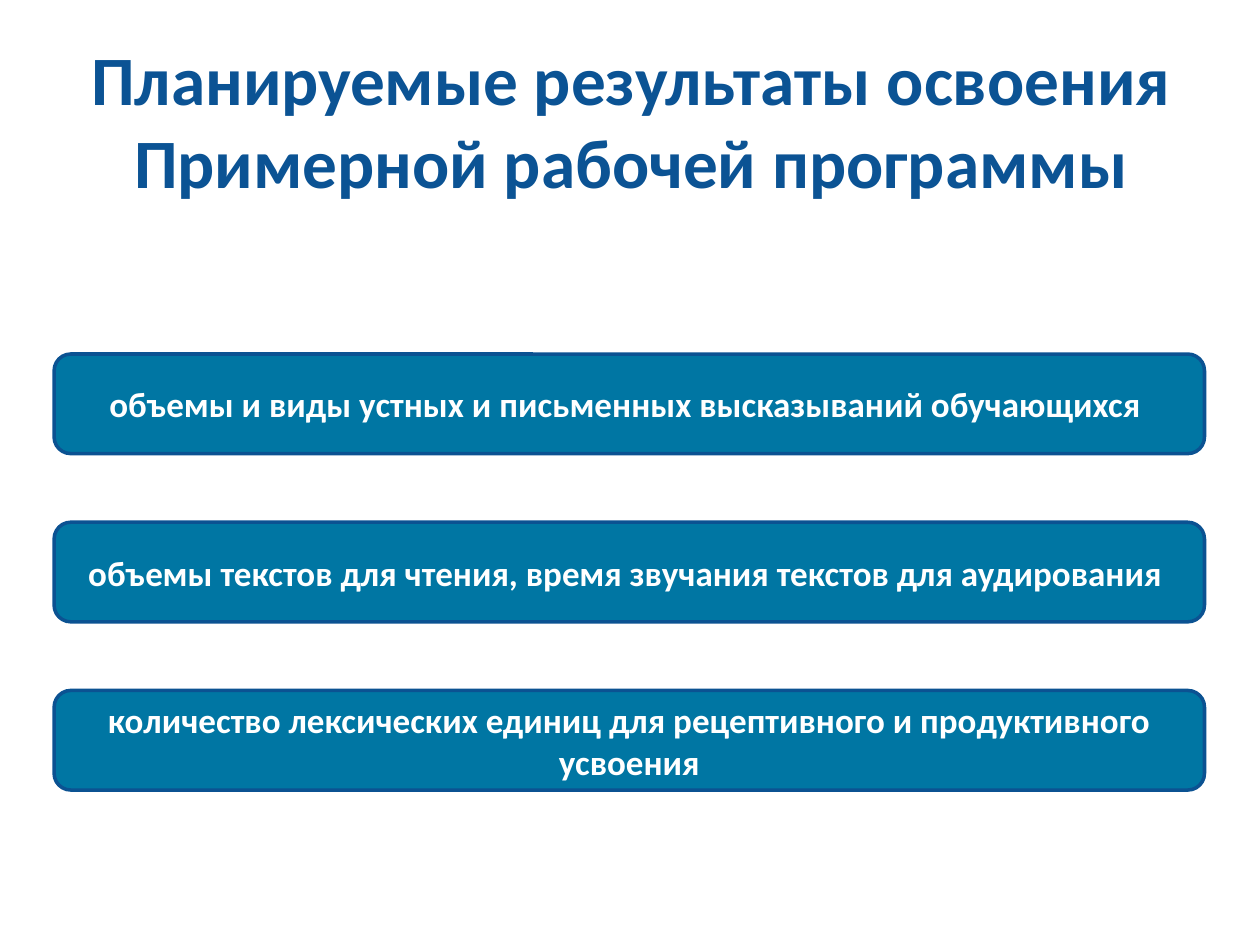
from dataclasses import dataclass

from pptx import Presentation
from pptx.dml.color import RGBColor
from pptx.enum.shapes import MSO_SHAPE
from pptx.enum.text import MSO_ANCHOR, PP_ALIGN
from pptx.util import Inches, Pt


@dataclass(frozen=True)
class Theme:
    """Colours, font and type sizes of the slide."""
    heading: RGBColor = RGBColor.from_string("0B5394")
    fill: RGBColor = RGBColor.from_string("0076A3")
    border: RGBColor = RGBColor.from_string("0B5292")
    light: RGBColor = RGBColor.from_string("FFFFFF")
    font: str = "Calibri"
    title_size: float = 39.6
    bar_size: float = 20


THEME = Theme()
TITLE = "Планируемые результаты освоения Примерной рабочей программы"
RESULTS = [
    "объемы и виды устных и письменных высказываний обучающихся ",
    "объемы текстов для чтения, время звучания текстов для аудирования ",
    "количество лексических единиц для рецептивного и продуктивного усвоения",
]


def write_text(sp, text, *, size, color, bold=True, align=PP_ALIGN.CENTER):
    """Put one formatted, vertically centred paragraph into a shape."""
    tf = sp.text_frame
    tf.word_wrap = True
    tf.vertical_anchor = MSO_ANCHOR.MIDDLE
    p = tf.paragraphs[0]
    p.alignment = align
    r = p.add_run()
    r.text = text
    r.font.name = THEME.font
    r.font.size = Pt(size)
    r.font.bold = bold
    r.font.color.rgb = color


def add_title(s, text, left, top, width, height):
    """Place the slide heading in the given box."""
    sp = s.shapes.add_textbox(left, top, width, height)
    write_text(sp, text, size=THEME.title_size, color=THEME.heading)


def add_result_bars(s, texts, left, top, width, height, bar_height):
    """Spread one rounded bar per text evenly down the given box."""
    step = (height - bar_height) / (len(texts) - 1)
    for i, text in enumerate(texts):
        sp = s.shapes.add_shape(MSO_SHAPE.ROUNDED_RECTANGLE, left,
                                round(top + i * step), width, bar_height)
        sp.shadow.inherit = False
        sp.fill.solid()
        sp.fill.fore_color.rgb = THEME.fill
        sp.line.color.rgb = THEME.border
        sp.line.width = Pt(2)
        write_text(sp, text, size=THEME.bar_size, color=THEME.light)


def main():
    """Build the slide and save it."""
    prs = Presentation()
    prs.slide_width, prs.slide_height = Inches(10), Inches(7.5)
    s = prs.slides.add_slide(prs.slide_layouts[6])
    add_title(s, TITLE, Inches(0.51), Inches(0.36), Inches(9), Inches(1.17))
    add_result_bars(s, RESULTS, Inches(0.43), Inches(2.81), Inches(9.13),
                    Inches(3.46), bar_height=Inches(0.79))
    prs.save("out.pptx")


if __name__ == "__main__":
    main()
